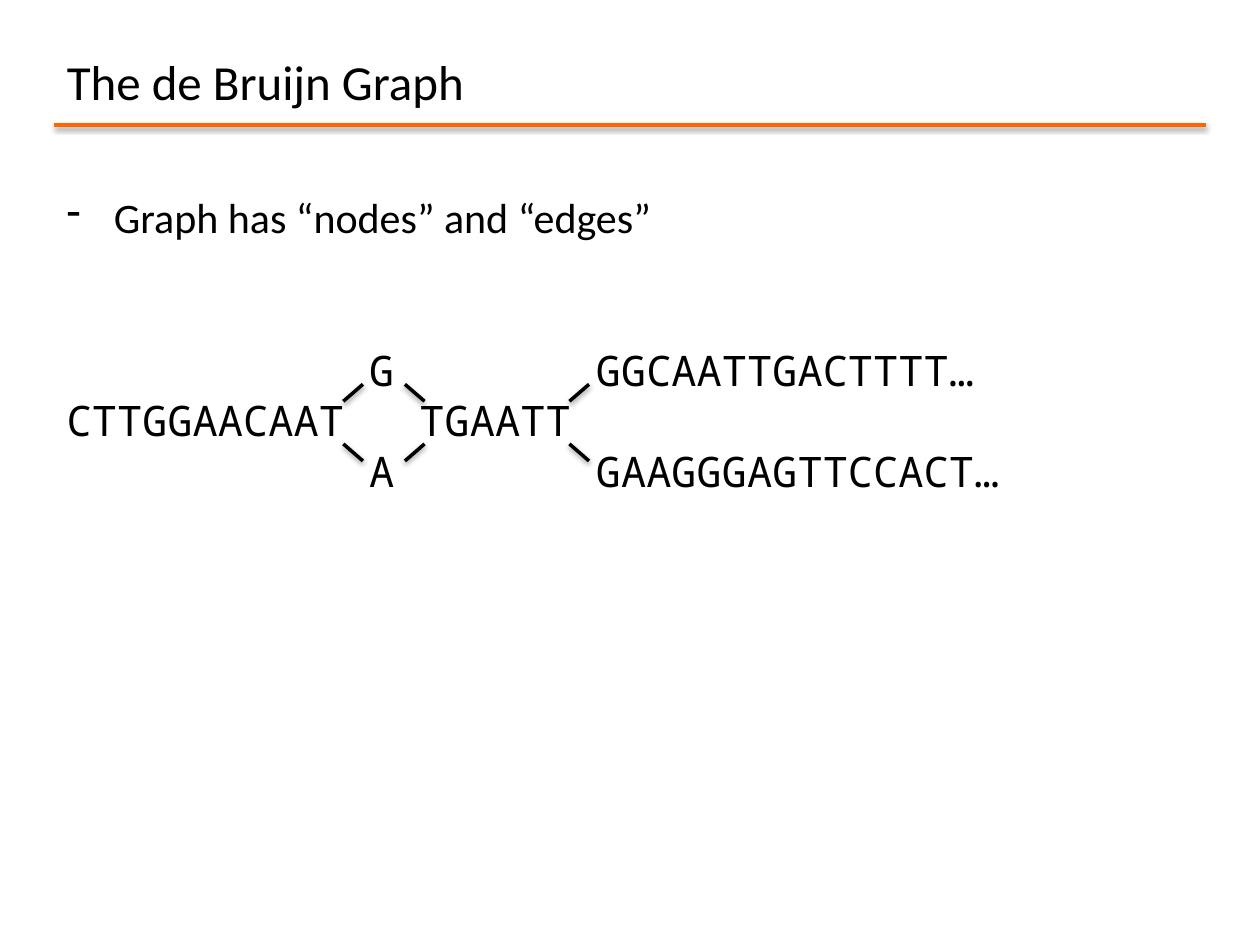
from lxml import etree
from pptx import Presentation
from pptx.dml.color import RGBColor
from pptx.enum import shapes, text
from pptx.oxml.ns import qn
from pptx.util import Pt

COLOURS = {"ink": "000000", "rule": "FF6600", "shadow": "000000"}
LETTER_WIDTH = 14.4
SEQUENCE_ROWS = [
    ("\tG\tGGCAATTGACTTTT…", (12, 21)),
    ("CTTGGAACAAT\tTGAATT", (14,)),
    ("\tA\tGAAGGGAGTTCCACT…", (12, 21)),
]


def colour(name):
    """Return a palette colour."""
    return RGBColor.from_string(COLOURS[name])


def set_font(paragraph, size, face):
    """Format a whole paragraph."""
    font = paragraph.font
    font.size, font.name = Pt(size), face
    font.color.rgb = colour("ink")


def set_frame(shape, left, top, width, height):
    """Place a text shape and make its text wrap from the top left."""
    shape.left, shape.top = Pt(left), Pt(top)
    shape.width, shape.height = Pt(width), Pt(height)
    frame = shape.text_frame
    frame.word_wrap = True
    frame.auto_size = text.MSO_AUTO_SIZE.NONE
    frame.vertical_anchor = text.MSO_ANCHOR.TOP
    return frame


def add_line(slide, start, end, ink):
    """Draw a straight line with a soft shadow below it."""
    line = slide.shapes.add_connector(
        shapes.MSO_CONNECTOR.STRAIGHT, *map(Pt, start + end))
    line.line.color.rgb = colour(ink)
    line.line.width = Pt(2)
    effects = etree.SubElement(line._element.spPr, qn("a:effectLst"))
    shadow = etree.SubElement(
        effects, qn("a:outerShdw"), blurRad=str(Pt(3.1)), dist=str(Pt(1.6)),
        dir="5400000", rotWithShape="0")
    tint = etree.SubElement(shadow, qn("a:srgbClr"), val=COLOURS["shadow"])
    etree.SubElement(tint, qn("a:alpha"), val="38000")


def add_title(slide):
    """Fill the title and underline it."""
    frame = set_frame(slide.shapes.title, 31, 26, 635, 41)
    heading = frame.paragraphs[0]
    heading.text = "The de Bruijn Graph"
    heading.alignment = text.PP_ALIGN.LEFT
    set_font(heading, 28, "Calibri")
    add_line(slide, (31, 71.4), (689, 71.4), "rule")


def add_bullet(paragraph, wording):
    """Write a paragraph with a hanging dash."""
    paragraph.text = wording
    properties = paragraph._p.get_or_add_pPr()
    properties.set("marL", str(Pt(27)))
    properties.set("indent", str(Pt(-27)))
    etree.SubElement(properties, qn("a:buFontTx"))
    etree.SubElement(properties, qn("a:buChar"), char="-")
    set_font(paragraph, 24, "Calibri")


def add_sequences(paragraph, wording, columns):
    """Write one row of sequences, each starting at a letter column."""
    paragraph.text = wording
    stops = etree.SubElement(paragraph._p.get_or_add_pPr(), qn("a:tabLst"))
    for column in columns:
        etree.SubElement(
            stops, qn("a:tab"), pos=str(Pt(column * LETTER_WIDTH)), algn="l")
    set_font(paragraph, 24, "Noto Sans Mono")


def add_body(slide):
    """Write the bullet and the sequences that are the graph's nodes."""
    body = slide.shapes.add_textbox(0, 0, 0, 0)
    frame = set_frame(body, 31, 105.8, 674, 211)
    add_bullet(frame.paragraphs[0], "Graph has “nodes” and “edges”")
    for wording, columns in SEQUENCE_ROWS:
        add_sequences(frame.add_paragraph(), wording, columns)
    frame.paragraphs[1].space_before = Pt(58.6)


def add_edges(slide):
    """Join the middle row to the branches above and below it."""
    for middle_x, branch_x in ((196.2, 207.4), (325.4, 336.6), (242.6, 231.4)):
        for middle_y, branch_y in ((229.3, 219.6), (253.7, 263.4)):
            add_line(slide, (middle_x, middle_y), (branch_x, branch_y), "ink")


def main():
    """Build and save the slide."""
    deck = Presentation()
    deck.slide_width, deck.slide_height = Pt(720), Pt(540)
    slide = deck.slides.add_slide(deck.slide_layouts[5])
    add_title(slide)
    add_body(slide)
    add_edges(slide)
    deck.save("out.pptx")


if __name__ == "__main__":
    main()
